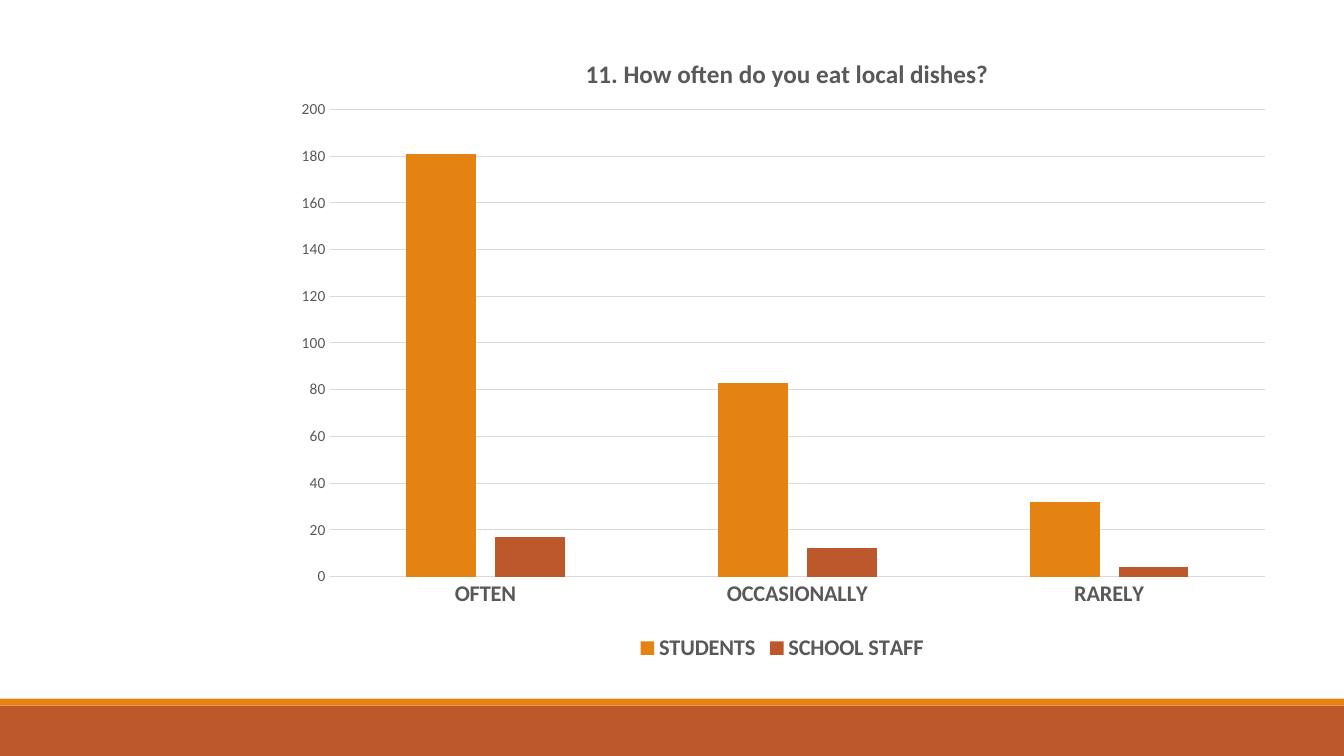
from lxml import etree
from pptx import Presentation
from pptx.chart.data import CategoryChartData
from pptx.dml.color import RGBColor
from pptx.enum import chart as ch, shapes
from pptx.oxml import ns
from pptx.util import Pt

COLORS = {"students": "E48312", "staff": "BD582C", "text": "595959", "grid": "D9D9D9"}
FONT = "Calibri"
ANSWERS = ["OFTEN", "OCCASIONALLY", "RARELY"]
SERIES = [
    ("STUDENTS", [181, 83, 32], "students"),
    ("SCHOOL STAFF", [17, 12, 4], "staff"),
]


def rgb(name):
    """Return the named colour."""
    return RGBColor.from_string(COLORS[name])


def style_font(font, size, bold=False):
    """Give chart text its face, size, weight and colour."""
    font.name, font.size, font.bold = FONT, Pt(size), bold
    font.color.rgb = rgb("text")


def style_line(line, color):
    """Draw a thin chart line."""
    line.color.rgb = rgb(color)
    line.width = Pt(0.75)


def place(part, before, **fractions):
    """Fix a chart part's place as fractions of the chart, ahead of the given child."""
    for old in part.findall(ns.qn("c:layout")):
        part.remove(old)
    layout = etree.Element(ns.qn("c:layout"))
    manual = etree.SubElement(layout, ns.qn("c:manualLayout"))
    if "w" in fractions:
        etree.SubElement(manual, ns.qn("c:layoutTarget")).set("val", "inner")
    for axis in "xy":
        etree.SubElement(manual, ns.qn(f"c:{axis}Mode")).set("val", "edge")
    for key, value in fractions.items():
        etree.SubElement(manual, ns.qn(f"c:{key}")).set("val", str(value))
    part.find(ns.qn(before)).addprevious(layout)


def add_footer(slide, left, top, width, height):
    """Place the two footer bands in the given box."""
    accent = 5
    for y, band_height, color in (
        (top + accent, height - accent, "staff"),
        (top, accent, "students"),
    ):
        band = slide.shapes.add_shape(
            shapes.MSO_SHAPE.RECTANGLE, Pt(left), Pt(y), Pt(width), Pt(band_height)
        )
        band.shadow.inherit = False
        band.fill.solid()
        band.fill.fore_color.rgb = rgb(color)
        band.line.fill.background()


def add_survey_chart(slide, left, top, width, height):
    """Place the survey column chart in the given box."""
    answers = CategoryChartData()
    answers.categories = ANSWERS
    for name, values, _ in SERIES:
        answers.add_series(name, values)
    chart = slide.shapes.add_chart(
        ch.XL_CHART_TYPE.COLUMN_CLUSTERED, Pt(left), Pt(top), Pt(width), Pt(height), answers
    ).chart
    style_font(chart.font, 10)

    chart.has_title = True
    question = chart.chart_title.text_frame
    question.text = "11. How often do you eat local dishes?"
    style_font(question.paragraphs[0].font, 18, True)
    chart.chart_title.include_in_layout = False
    place(chart.chart_title._element, "c:overlay", x=0.3, y=0.04)

    chart.has_legend = True
    chart.legend.position = ch.XL_LEGEND_POSITION.BOTTOM
    chart.legend.include_in_layout = False
    style_font(chart.legend.font, 16, True)

    columns = chart.plots[0]
    columns.gap_width, columns.overlap = 219, -27
    columns.vary_by_categories = False
    for series, (_, _, color) in zip(columns.series, SERIES):
        series.format.fill.solid()
        series.format.fill.fore_color.rgb = rgb(color)
        series.invert_if_negative = False

    for axis in (chart.category_axis, chart.value_axis):
        axis.major_tick_mark = axis.minor_tick_mark = ch.XL_TICK_MARK.NONE
    style_font(chart.category_axis.tick_labels.font, 16, True)
    style_line(chart.category_axis.format.line, "grid")
    counts = chart.value_axis
    counts.minimum_scale, counts.maximum_scale, counts.major_unit = 0, 200, 20
    style_font(counts.tick_labels.font, 11)
    counts.format.line.fill.background()
    style_line(counts.major_gridlines.format.line, "grid")
    plot_area = chart._chartSpace.chart.plotArea
    place(plot_area, "c:barChart", x=0.05, y=0.13, w=0.93, h=0.73)


def main():
    """Build and save the slide."""
    deck = Presentation()
    deck.slide_width, deck.slide_height = Pt(960), Pt(540)
    slide = deck.slides.add_slide(deck.slide_layouts[6])
    add_footer(slide, 0, 499, 960, 41)
    add_survey_chart(slide, 199.5, 18.7, 718.5, 457.2)
    deck.save("out.pptx")


if __name__ == "__main__":
    main()
